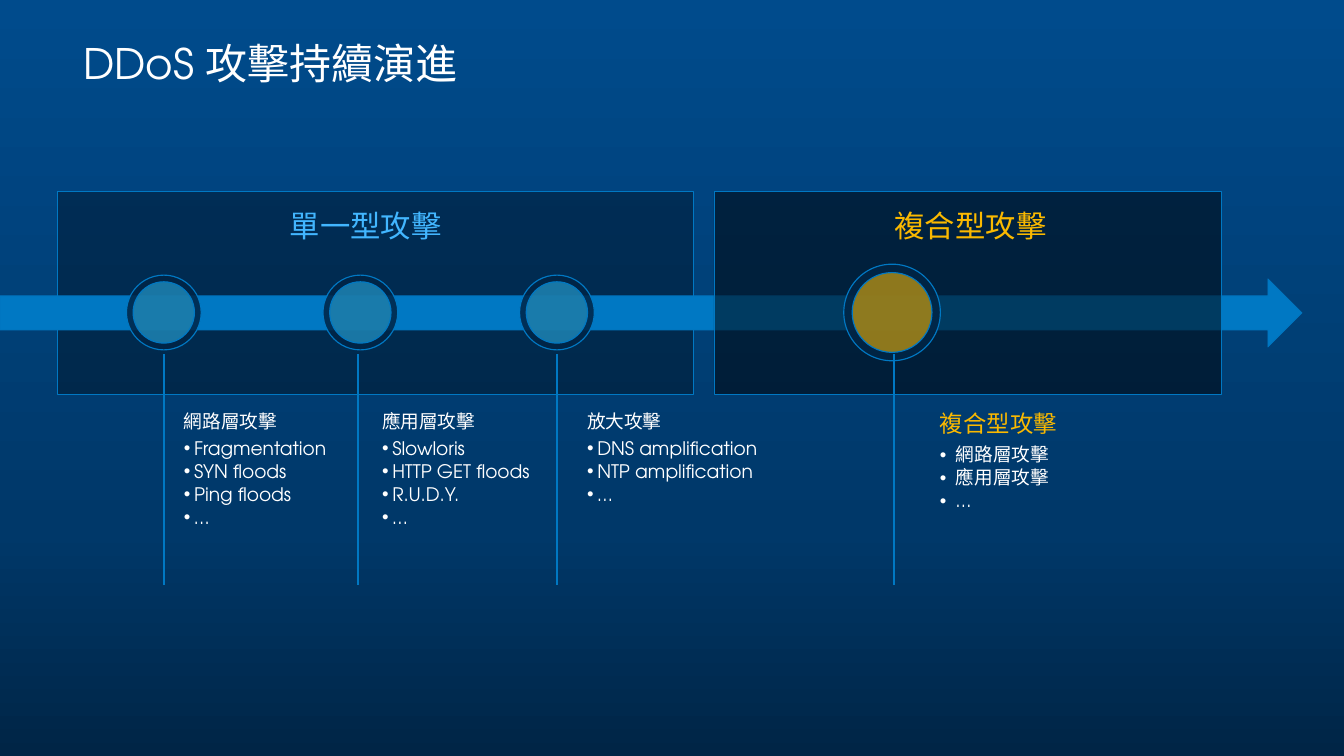
import copy

import pptx
import pptx.dml.color
import pptx.enum.shapes
import pptx.enum.text
import pptx.oxml
import pptx.oxml.ns
import pptx.util

Pt = pptx.util.Pt
Shapes = pptx.enum.shapes.MSO_SHAPE
Align = pptx.enum.text.PP_ALIGN
Anchor = pptx.enum.text.MSO_ANCHOR
AutoSize = pptx.enum.text.MSO_AUTO_SIZE
qn = pptx.oxml.ns.qn

COLORS = {
    "top": "004B8C", "middle": "003869", "navy": "002546", "black": "000000",
    "blue": "0078C3", "edge": "0075BF", "cyan": "2DB4EB", "sky": "42B6FF",
    "gold": "FAB900", "white": "FFFFFF",
}
FONT = "TeX Gyre Adventor"
COLUMNS, ROWS = 16, 9
AXIS = 3.72  # row on which the arrow and all nodes are centred


def rgb(name):
    return pptx.dml.color.RGBColor.from_string(COLORS[name])


def apply(target, values):
    for name, value in values.items():
        setattr(target, name, value)


def add_xml(parent, tag, **attributes):
    child = parent.makeelement(qn(tag), attributes)
    parent.append(child)
    return child


class TimelineSlide:
    """Draws on one slide; all lengths are columns and rows of a 16 by 9 grid."""

    def __init__(self, deck):
        self.column = deck.slide_width / COLUMNS
        self.row = deck.slide_height / ROWS
        self.page = deck.slides.add_slide(deck.slide_layouts.get_by_name("Comparison"))
        self.title_holder, *self.list_holders = self.page.placeholders

    def place(self, left, top, width, height):
        return (round(left * self.column), round(top * self.row),
                round(width * self.column), round(height * self.row))

    def background(self, *stops):
        fill = self.page.background.fill
        fill.gradient()
        fill.gradient_angle = 270
        stop_list = self.page.element.find(".//" + qn("a:gsLst"))
        while len(stop_list) < len(stops):
            stop_list.append(copy.deepcopy(stop_list[-1]))
        for stop, (position, color) in zip(fill.gradient_stops, stops):
            stop.color.rgb = rgb(color)
            stop.position = position

    def shape(self, kind, area, fill, alpha=100, line="blue", weight=0.75):
        shape = self.page.shapes.add_shape(kind, *self.place(*area))
        shape.shadow.inherit = False
        shape.fill.solid()
        shape.fill.fore_color.rgb = rgb(fill)
        if alpha < 100:
            color = shape.element.spPr.find(qn("a:solidFill"))[0]
            add_xml(color, "a:alpha", val=str(alpha * 1000))
        shape.line.color.rgb = rgb(line)
        shape.line.width = Pt(weight)
        return shape

    def panel(self, left, width, alpha):
        panel = self.shape(Shapes.ROUNDED_RECTANGLE, (left, 2.28, width, 2.42),
                           "black", alpha)
        panel.adjustments[0] = 0

    def node(self, center, outer, inner, color):
        for size, fill, alpha in ((outer, "navy", 86), (inner, color, 57)):
            area = (center - size / 2, AXIS - size / 2, size, size)
            self.shape(Shapes.OVAL, area, fill, alpha, weight=1)

    def stem(self, column):
        left, top, _, height = self.place(column, 4.21, 0, 2.75)
        stem = self.page.shapes.add_connector(
            pptx.enum.shapes.MSO_CONNECTOR.STRAIGHT, left, top + height, left, top)
        stem.line.color.rgb = rgb("blue")
        stem.line.width = Pt(2)
        add_xml(stem.element.spPr, "a:effectLst")

    def add_text(self, para, text, size, color, **layout):
        apply(para, {"space_before": Pt(0), **layout})
        span = para.add_run()
        span.text = text
        apply(span.font, {"name": FONT, "size": Pt(size), "bold": False})
        span.font.color.rgb = rgb(color)

    def holder_frame(self, holder, area, anchor, inset=0):
        """Move a placeholder and return its formatted text frame."""
        left, top, width, height = self.place(*area)
        apply(holder, {"left": left, "top": top, "width": width, "height": height})
        frame = holder.text_frame
        apply(frame, {
            "margin_left": round(inset * self.column), "margin_top": 0,
            "margin_right": 0, "margin_bottom": 0, "word_wrap": True,
            "vertical_anchor": anchor, "auto_size": AutoSize.NONE,
        })
        return frame

    def title(self, text):
        frame = self.holder_frame(self.title_holder, (0.99, 0.26, 13.52, 0.8),
                                  Anchor.BOTTOM)
        self.add_text(frame.paragraphs[0], text, 36, "white", alignment=Align.LEFT,
                      line_spacing=0.95, space_after=Pt(2))

    def caption(self, left, text, color):
        box = self.page.shapes.add_textbox(*self.place(left, 2.42, 2.69, 0.54))
        apply(box.text_frame, {"word_wrap": True,
                               "auto_size": AutoSize.SHAPE_TO_FIT_TEXT})
        self.add_text(box.text_frame.paragraphs[0], text, 26, color,
                      alignment=Align.CENTER)

    def attack_list(self, area, inset, heading, items, indent=0.12, size=16,
                    color="white"):
        frame = self.holder_frame(self.list_holders.pop(0), area, Anchor.TOP, inset)
        head = frame.paragraphs[0]
        self.add_text(head, heading, size, color, alignment=Align.LEFT,
                      line_spacing=0.9, space_after=Pt(0.35 * size))
        self.bullet(head, 0)
        for item in items:
            para = frame.add_paragraph()
            self.add_text(para, item, 16, "white", level=1, alignment=Align.LEFT,
                          line_spacing=0.9, space_after=Pt(2.4))
            self.bullet(para, indent, "•")

    def bullet(self, para, indent, mark=None):
        properties = para._p.get_or_add_pPr()
        hang = round(indent * self.column)
        properties.set("marL", str(hang))
        properties.set("indent", str(-hang))
        if mark:
            add_xml(properties, "a:buChar", char=mark)
        else:
            add_xml(properties, "a:buNone")


def main():
    deck = pptx.Presentation()
    deck.slide_width = pptx.util.Inches(COLUMNS)
    deck.slide_height = pptx.util.Inches(ROWS)

    slide = TimelineSlide(deck)
    slide.background((0, "top"), (0.7, "middle"), (1, "navy"))
    slide.title("DDoS 攻擊持續演進")

    slide.panel(0.68, 7.57, 33)
    slide.shape(Shapes.RIGHT_ARROW, (0, AXIS - 0.4, 15.5, 0.81), "blue", line="edge")
    slide.caption(3.01, "單一型攻擊", "sky")
    for index, stem in enumerate((1.95, 4.26, 6.63)):
        slide.node(1.95 + 2.34 * index, 0.89, 0.73, "cyan")
        slide.stem(stem)

    single_attacks = (
        (2.07, 1.85, 0.12, "網路層攻擊",
         ("Fragmentation", "SYN floods", "Ping floods", "…")),
        (4.35, 1.99, 0.2, "應用層攻擊",
         ("Slowloris", "HTTP GET floods", "R.U.D.Y.", "…")),
        (6.72, 2.44, 0.27, "放大攻擊",
         ("DNS amplification", "NTP amplification", "…")),
    )
    for left, width, inset, heading, items in single_attacks:
        slide.attack_list((left, 4.91, width, 2.05), inset, heading, items)

    slide.panel(8.5, 6.04, 50)
    slide.node(10.62, 1.15, 0.95, "gold")
    slide.caption(10.21, "複合型攻擊", "gold")
    slide.stem(10.64)
    slide.attack_list((10.83, 4.91, 3.27, 1.68), 0.36, "複合型攻擊",
                      ("網路層攻擊", "應用層攻擊", "…"),
                      indent=0.19, size=20, color="gold")

    deck.save("out.pptx")


if __name__ == "__main__":
    main()
